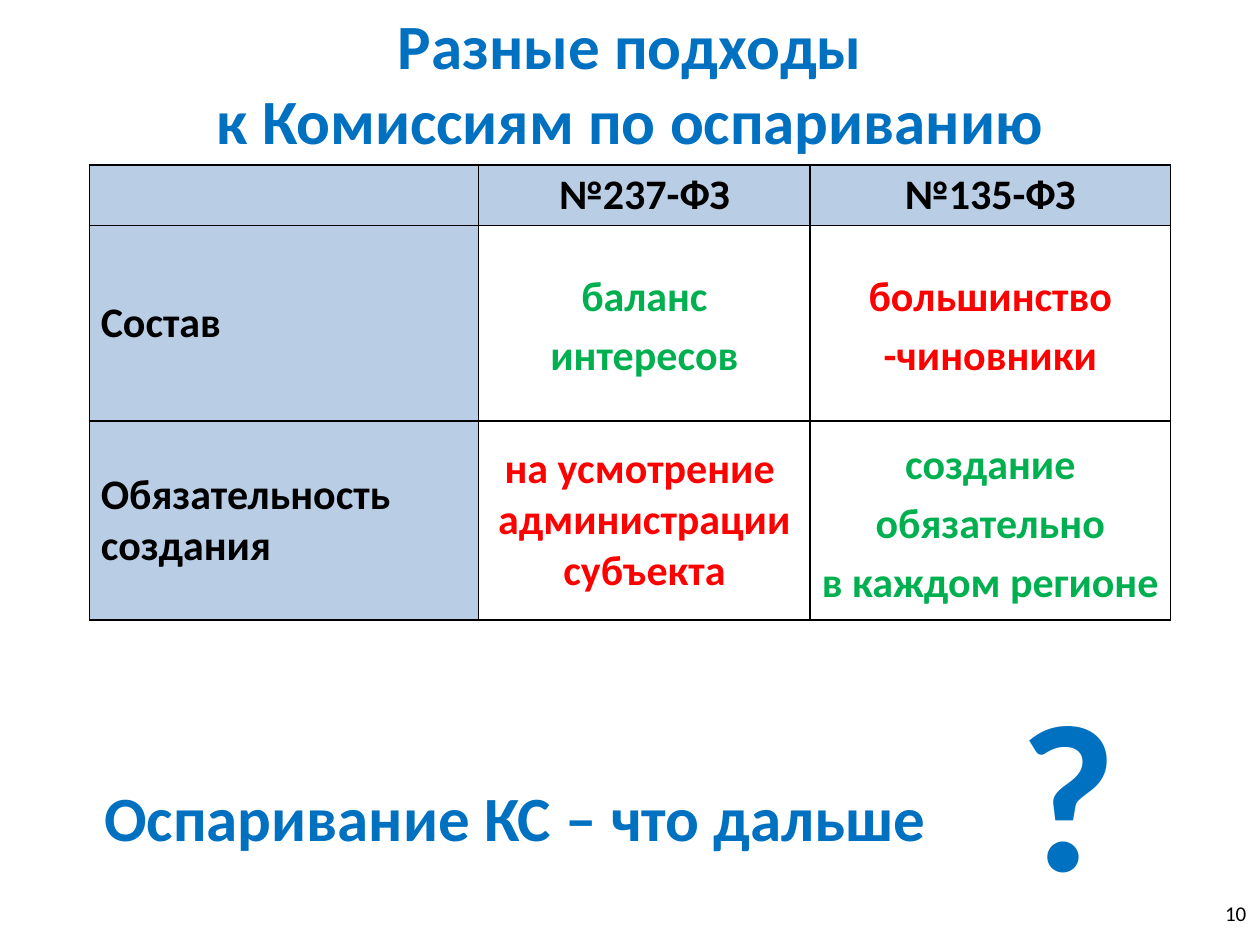
import pptx
import pptx.dml.color
import pptx.enum.text
import pptx.oxml
import pptx.oxml.ns
import pptx.util

Inches = pptx.util.Inches
Pt = pptx.util.Pt
Align = pptx.enum.text.PP_ALIGN
Anchor = pptx.enum.text.MSO_ANCHOR

THEME = {
    "font": "Calibri",
    "black": "000000", "blue": "0070C0", "header": "B9CDE5",
    "good": "00B050", "bad": "FF0000",
    "number": 12, "cell": 24, "title": 36, "mark": 120,
}


def write(frame, lines, size, color, bold=True, **layout):
    """Fill a text frame with one paragraph per line in a single style."""
    frame.word_wrap = True
    for index, line in enumerate(lines):
        para = frame.add_paragraph() if index else frame.paragraphs[0]
        para.text = line
        for name, value in layout.items():
            setattr(para, name, value)
        for span in para.runs:
            style = {"name": THEME["font"], "size": Pt(THEME[size]), "bold": bold}
            for name, value in style.items():
                setattr(span.font, name, value)
            span.font.color.rgb = pptx.dml.color.RGBColor.from_string(THEME[color])


def outline(cell):
    """Draw a thin black line on all four sides of a cell."""
    properties = cell._tc.get_or_add_tcPr()
    for position, side in enumerate(("lnL", "lnR", "lnT", "lnB")):
        properties.insert(position, pptx.oxml.parse_xml(
            f'<a:{side} {pptx.oxml.ns.nsdecls("a")} w="{Pt(1)}"><a:solidFill>'
            f'<a:srgbClr val="{THEME["black"]}"/></a:solidFill></a:{side}>'))


deck = pptx.Presentation()
deck.slide_width, deck.slide_height = Inches(10), Inches(7.5)
page = deck.slides.add_slide(deck.slide_layouts[6])

# Title, closing question and page number
TEXTS = [
    ((0, 0, 10, 1.31), "Разные подходы\vк Комиссиям по оспариванию",
     "title", "blue", True, Align.CENTER),
    ((0.51, 6.13, 7.16, 0.71), "Оспаривание КС – что дальше",
     "title", "blue", True, Align.CENTER),
    ((7.99, 5.2, 0.55, 2.12), "?", "mark", "blue", True, Align.CENTER),
    ((7.66, 7.1, 2.33, 0.4), "10", "number", "black", False, Align.RIGHT),
]
for place, text, size, color, bold, alignment in TEXTS:
    box = page.shapes.add_textbox(*map(Inches, place))
    write(box.text_frame, [text], size, color, bold, alignment=alignment)

# Comparison table: each cell holds its paragraphs, colour and layout
CENTER = {"alignment": Align.CENTER}
LOOSE = {"alignment": Align.CENTER, "line_spacing": 1.15, "space_after": Pt(10)}
LEFT = {"alignment": Align.LEFT}
ROWS = [
    [([""], "black", LEFT),
     (["№237-ФЗ"], "black", CENTER),
     (["№135-ФЗ"], "black", CENTER)],
    [(["Состав"], "black", LEFT),
     (["баланс интересов"], "good", LOOSE),
     (["большинство -чиновники"], "bad", LOOSE)],
    [(["Обязательность создания"], "black", LEFT),
     (["на усмотрение ", "администрации субъекта"], "bad", CENTER),
     (["создание обязательно\vв каждом регионе"], "good", LOOSE)],
]
WIDTHS = [3.09, 2.63, 2.86]
HEIGHTS = [0.48, 1.55, 1.58]
CELL_FORMAT = {
    "vertical_anchor": Anchor.MIDDLE,
    "margin_left": Inches(0.09), "margin_right": Inches(0.09),
    "margin_top": Inches(0.04), "margin_bottom": Inches(0.04),
}

table = page.shapes.add_table(
    len(ROWS), len(WIDTHS), Inches(0.71), Inches(1.31),
    Inches(sum(WIDTHS)), Inches(sum(HEIGHTS))).table
table.first_row = table.horz_banding = False
for column, width in zip(table.columns, WIDTHS):
    column.width = Inches(width)
for row, height in zip(table.rows, HEIGHTS):
    row.height = Inches(height)

for r, cells in enumerate(ROWS):
    for c, (lines, color, layout) in enumerate(cells):
        cell = table.cell(r, c)
        for name, value in CELL_FORMAT.items():
            setattr(cell, name, value)
        if r == 0 or c == 0:
            cell.fill.solid()
            cell.fill.fore_color.rgb = pptx.dml.color.RGBColor.from_string(THEME["header"])
        else:
            cell.fill.background()
        outline(cell)
        write(cell.text_frame, lines, "cell", color, **layout)

deck.save("out.pptx")
